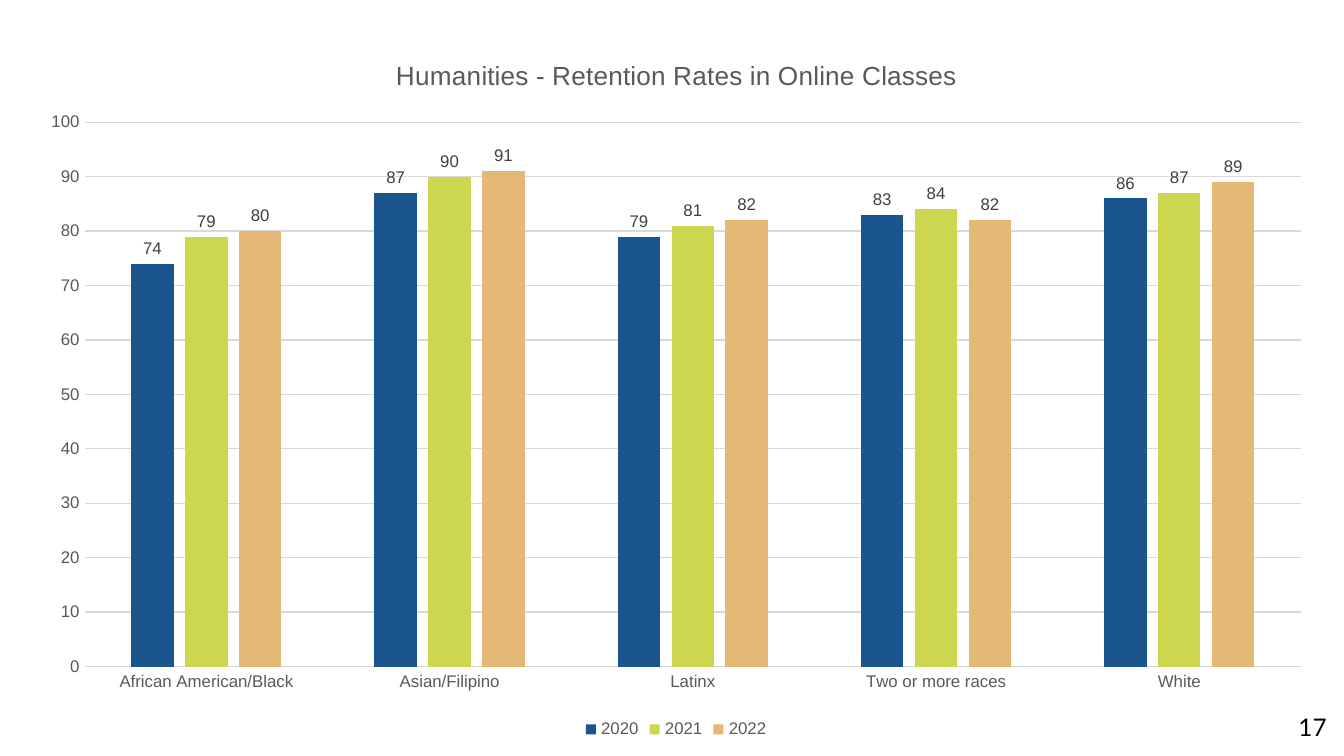
from pptx import Presentation
from pptx.chart.data import CategoryChartData
from pptx.dml.color import RGBColor
from pptx.enum.chart import XL_CHART_TYPE, XL_LABEL_POSITION, XL_LEGEND_POSITION, XL_TICK_MARK
from pptx.enum.text import MSO_ANCHOR, PP_ALIGN
from pptx.oxml import parse_xml
from pptx.oxml.ns import nsdecls
from pptx.util import Inches, Pt

CATEGORIES = ["African American/Black", "Asian/Filipino", "Latinx", "Two or more races", "White"]
SERIES = {
    "2020": ([74, 87, 79, 83, 86], "1B558E"),
    "2021": ([79, 90, 81, 84, 87], "CCD64E"),
    "2022": ([80, 91, 82, 82, 89], "E5B875"),
}
TITLE = "Humanities - Retention Rates in Online Classes"
GRAY, LABEL_GRAY, LINE_GRAY = "595959", "404040", "D9D9D9"


def color(value):
    """Turn a hex string into a colour."""
    return RGBColor.from_string(value)


def set_values(target, values):
    """Set every attribute named in a dict."""
    for name, value in values.items():
        setattr(target, name, value)


def set_font(font, size, hex_color, name="Arial"):
    """Give a font its face, size and colour."""
    set_values(font, {"name": name, "size": Pt(size), "bold": False})
    font.color.rgb = color(hex_color)


def set_line(line, hex_color):
    """Give a chart line its colour and width."""
    line.color.rgb = color(hex_color)
    line.width = Pt(0.75)


def set_layout(parent, index, box, left, top, width=None, height=None):
    """Place a chart part by inches within the chart box."""
    for layout in parent.xpath("c:layout"):
        parent.remove(layout)
    sizes = {"x": left / box[2], "y": top / box[3]}
    target = ""
    if width:
        target = '<c:layoutTarget val="inner"/>'
        sizes.update(w=width / box[2], h=height / box[3])
    modes = "".join(f'<c:{key}Mode val="edge"/>' for key in "xy")
    values = "".join(f'<c:{key} val="{value:.4f}"/>' for key, value in sizes.items())
    parent.insert(index, parse_xml(
        f'<c:layout {nsdecls("c")}><c:manualLayout>{target}{modes}{values}'
        "</c:manualLayout></c:layout>"))


def format_axes(chart):
    """Format the category and value axes."""
    for axis in (chart.category_axis, chart.value_axis):
        set_values(axis, {"major_tick_mark": XL_TICK_MARK.NONE,
                          "minor_tick_mark": XL_TICK_MARK.NONE})
        set_font(axis.tick_labels.font, 9, GRAY)
    set_line(chart.category_axis.format.line, LINE_GRAY)
    set_values(chart.value_axis, {"minimum_scale": 0, "maximum_scale": 100,
                                  "major_unit": 10, "has_major_gridlines": True})
    chart.value_axis.format.line.fill.background()
    set_line(chart.value_axis.major_gridlines.format.line, LINE_GRAY)


def format_series(plot):
    """Colour the columns and label their values."""
    set_values(plot, {"gap_width": 219, "overlap": -27, "vary_by_categories": False})
    for series in plot.series:
        series.format.fill.solid()
        series.format.fill.fore_color.rgb = color(SERIES[series.name][1])
        labels = series.data_labels
        set_values(labels, {"show_value": True, "position": XL_LABEL_POSITION.OUTSIDE_END})
        set_font(labels.font, 9, LABEL_GRAY)


def add_retention_chart(page, box):
    """Add the retention column chart with its title and legend."""
    data = CategoryChartData()
    data.categories = CATEGORIES
    for name, (values, _) in SERIES.items():
        data.add_series(name, values)
    chart = page.shapes.add_chart(
        XL_CHART_TYPE.COLUMN_CLUSTERED, *map(Inches, box), data).chart
    set_font(chart.font, 10, "000000")
    set_values(chart, {"has_title": True, "has_legend": True})
    title = chart.chart_title
    title.include_in_layout = False
    title.text_frame.text = TITLE
    set_font(title.text_frame.paragraphs[0].runs[0].font, 14, GRAY)
    set_values(chart.legend, {"position": XL_LEGEND_POSITION.BOTTOM,
                              "include_in_layout": False})
    set_font(chart.legend.font, 9, GRAY)
    format_axes(chart)
    format_series(chart.plots[0])
    set_layout(chart.element.xpath("c:chart/c:title")[0], 1, box, 2.72, 0.15)
    set_layout(chart.element.xpath("c:chart/c:plotArea")[0], 0, box, 0.44, 0.66, 9.05, 4.05)


def add_page_number(page, box, number):
    """Add the right-aligned page number."""
    frame = page.shapes.add_textbox(*map(Inches, box)).text_frame
    set_values(frame, {"word_wrap": True, "vertical_anchor": MSO_ANCHOR.MIDDLE,
                       "margin_left": 0, "margin_right": 0,
                       "margin_top": 0, "margin_bottom": 0})
    para = frame.paragraphs[0]
    para.alignment = PP_ALIGN.RIGHT
    span = para.add_run()
    span.text = number
    set_font(span.font, 13, "000000", "Lato")


def main():
    """Build and save the deck."""
    deck = Presentation()
    set_values(deck, {"slide_width": Inches(10), "slide_height": Inches(10) * 9 // 16})
    page = deck.slides.add_slide(deck.slide_layouts[6])
    add_page_number(page, (9.27, 5.19, 0.6, 0.43), "17")
    add_retention_chart(page, (0.19, 0.25, 9.68, 5.29))
    deck.save("out.pptx")


if __name__ == "__main__":
    main()
